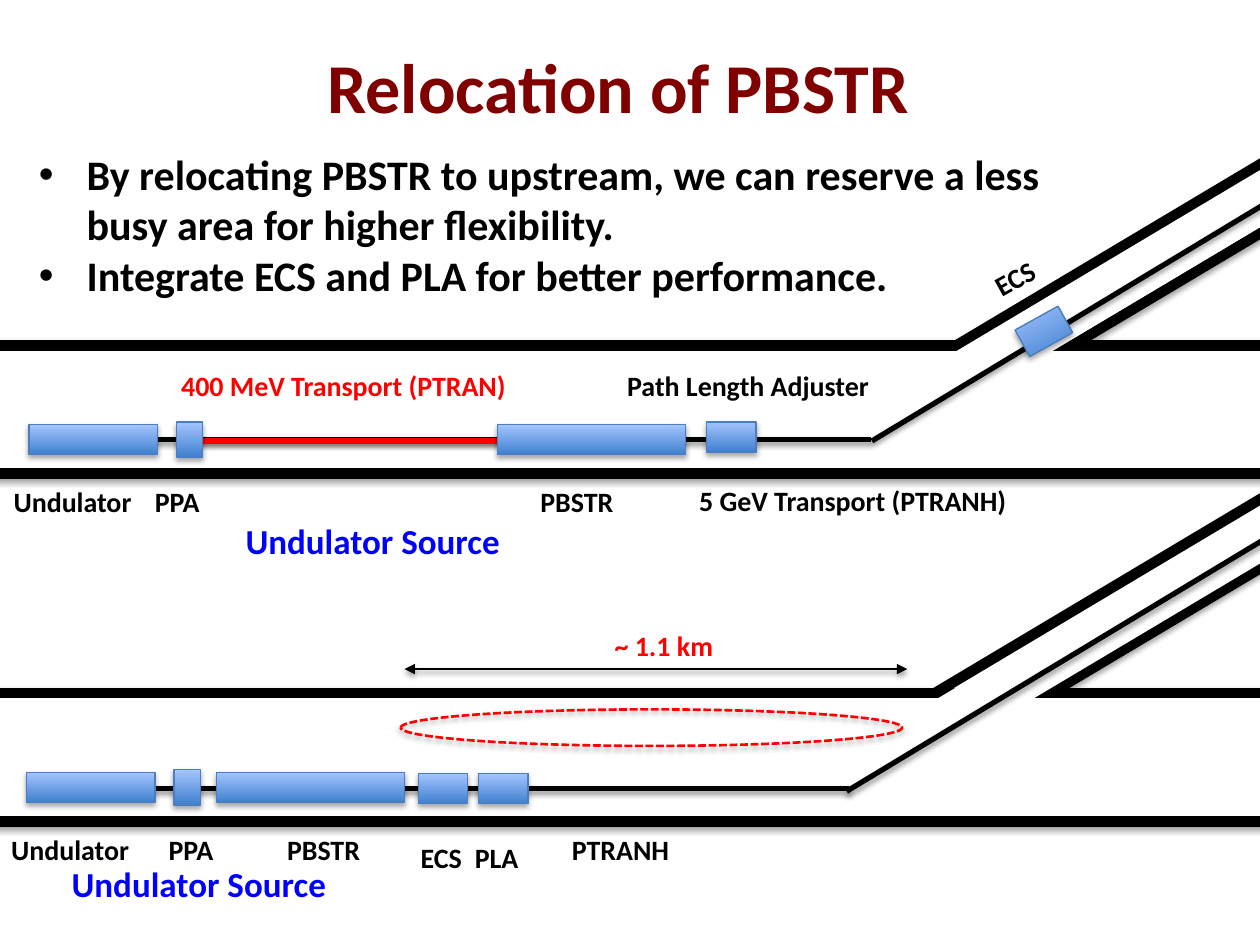
"""Build the slide on relocating PBSTR within the beam tunnel."""
from dataclasses import dataclass

from lxml import etree
from pptx import Presentation
from pptx.dml.color import RGBColor
from pptx.enum import dml, shapes, text
from pptx.oxml.ns import qn
from pptx.util import Inches, Pt


@dataclass(frozen=True)
class Theme:
    font: str = "Calibri"
    black: str = "000000"
    white: str = "FFFFFF"
    red: str = "FF0000"
    blue: str = "0000FF"
    maroon: str = "800000"
    device_low: str = "3F80CE"
    device_high: str = "A4C4FF"
    device_edge: str = "4B7EBC"
    title: int = 40
    body: int = 24
    caption: int = 20
    label: int = 16
    wall: float = 6
    beam: float = 3
    thin: float = 1.5
    edge: float = 0.75


T = Theme()
SLOPE = 329.2
DEVICE_TILT = 330.9


@dataclass(frozen=True)
class Box:
    x: float
    y: float
    w: float
    h: float
    rot: float = 0


@dataclass(frozen=True)
class Line:
    x1: float
    y1: float
    x2: float
    y2: float
    color: str = T.black
    width: float = T.beam
    arrows: bool = False


@dataclass(frozen=True)
class Label:
    words: str
    box: Box
    color: str = T.black
    size: int = T.label


@dataclass(frozen=True)
class Tunnel:
    branch: Box
    hall: Box
    opening: Box
    beams: list[Line]
    devices: list[Box]
    labels: list[Label]


def rgb(color: str) -> RGBColor:
    return RGBColor.from_string(color)


def add_shadow(sp_pr, alpha: int, dist: float) -> None:
    effects = sp_pr.find(qn("a:effectLst"))
    if effects is None:
        effects = etree.SubElement(sp_pr, qn("a:effectLst"))
    shadow = etree.SubElement(effects, qn("a:outerShdw"), blurRad=str(Pt(3.1)),
                              dist=str(Pt(dist)), dir="5400000", rotWithShape="0")
    color = etree.SubElement(shadow, qn("a:srgbClr"), val=T.black)
    etree.SubElement(color, qn("a:alpha"), val=str(alpha * 1000))


def add_box(s, box: Box, kind=shapes.MSO_SHAPE.RECTANGLE, fill: str | None = None,
            line: str | None = None, width: float = 0, shadow: bool = True):
    sp = s.shapes.add_shape(kind, Inches(box.x), Inches(box.y), Inches(box.w), Inches(box.h))
    sp.rotation = box.rot
    sp.shadow.inherit = False
    if fill:
        sp.fill.solid()
        sp.fill.fore_color.rgb = rgb(fill)
    else:
        sp.fill.background()
    if line:
        sp.line.color.rgb = rgb(line)
        sp.line.width = Pt(width)
    else:
        sp.line.fill.background()
    if shadow:
        add_shadow(sp._element.spPr, 35, 1.8)
    return sp


def add_device(s, box: Box) -> None:
    sp = add_box(s, box, line=T.device_edge, width=T.edge)
    sp.fill.gradient()
    sp.fill.gradient_angle = 90
    for stop, color in zip(sp.fill.gradient_stops, (T.device_low, T.device_high)):
        stop.color.rgb = rgb(color)


def add_line(s, line: Line) -> None:
    c = s.shapes.add_connector(shapes.MSO_CONNECTOR.STRAIGHT, Inches(line.x1),
                               Inches(line.y1), Inches(line.x2), Inches(line.y2))
    c.line.color.rgb = rgb(line.color)
    c.line.width = Pt(line.width)
    sp_pr = c._element.spPr
    if line.arrows:
        for end in ("a:headEnd", "a:tailEnd"):
            etree.SubElement(sp_pr.find(qn("a:ln")), qn(end), type="triangle")
    add_shadow(sp_pr, 38, 1.6)


def add_text(s, label: Label, wrap: bool = False, align=text.PP_ALIGN.LEFT,
             bullets: bool = False) -> None:
    b = label.box
    sp = s.shapes.add_textbox(Inches(b.x), Inches(b.y), Inches(b.w), Inches(b.h))
    sp.rotation = b.rot
    tf = sp.text_frame
    tf.word_wrap = wrap
    tf.auto_size = text.MSO_AUTO_SIZE.SHAPE_TO_FIT_TEXT
    tf.text = label.words
    for p in tf.paragraphs:
        p.alignment = align
        p.font.name, p.font.size, p.font.bold = T.font, Pt(label.size), True
        p.font.color.rgb = rgb(label.color)
        if bullets:
            p_pr = p._p.get_or_add_pPr()
            p_pr.set("marL", str(Inches(0.38)))
            p_pr.set("indent", str(-Inches(0.38)))
            bullet_font = etree.Element(qn("a:buFont"), typeface="Arial")
            bullet = etree.Element(qn("a:buChar"), char="•")
            p_pr.insert(0, bullet_font)
            p_pr.insert(1, bullet)


def add_tunnel(s, tunnel: Tunnel) -> None:
    for wall in (tunnel.branch, tunnel.hall):
        add_box(s, wall, fill=T.white, line=T.black, width=T.wall)
    add_box(s, tunnel.opening, fill=T.white, shadow=False)
    for beam in tunnel.beams:
        add_line(s, beam)
    for device in tunnel.devices:
        add_device(s, device)
    for label in tunnel.labels:
        add_text(s, label)


BEFORE = Tunnel(
    Box(7.1, 2.03, 3.5, 0.47, SLOPE), Box(-0.5, 2.74, 10.83, 1.02),
    Box(6.98, 2.08, 3.7, 0.39, SLOPE),
    [Line(0.42, 3.49, 6.91, 3.49), Line(6.92, 3.5, 10.98, 1.05),
     Line(1.42, 3.5, 4.93, 3.5, T.red)],
    [Box(0.23, 3.37, 1.02, 0.24), Box(1.4, 3.35, 0.21, 0.28), Box(3.95, 3.37, 1.49, 0.24),
     Box(5.61, 3.35, 0.39, 0.24), Box(8.09, 2.51, 0.39, 0.24, DEVICE_TILT)],
    [Label("Undulator Source", Box(1.85, 4.07, 2.25, 0.44), T.blue, T.caption),
     Label("Undulator", Box(0.01, 3.8, 1.15, 0.37)),
     Label("PPA", Box(1.13, 3.8, 0.58, 0.37)),
     Label("PBSTR", Box(4.19, 3.8, 0.79, 0.37)),
     Label("400 MeV Transport (PTRAN)", Box(1.34, 2.88, 2.83, 0.37), T.red),
     Label("5 GeV Transport (PTRANH)", Box(5.45, 3.79, 2.69, 0.37)),
     Label("Path Length Adjuster", Box(4.88, 2.88, 2.16, 0.37)),
     Label("ECS", Box(7.79, 2.02, 0.54, 0.37, DEVICE_TILT))])

AFTER = Tunnel(
    Box(7.08, 4.7, 3.5, 0.47, SLOPE), Box(-0.52, 5.5, 10.83, 1.02),
    Box(6.96, 4.76, 3.7, 0.39, SLOPE),
    [Line(0.25, 6.26, 6.74, 6.26), Line(6.72, 6.28, 10.78, 3.83),
     Line(3.21, 5.31, 7.2, 5.31, width=T.thin, arrows=True)],
    [Box(0.21, 6.13, 1.02, 0.24), Box(1.38, 6.11, 0.21, 0.28), Box(1.72, 6.13, 1.49, 0.24),
     Box(3.32, 6.14, 0.39, 0.24), Box(3.8, 6.14, 0.39, 0.24)],
    [Label("Undulator Source", Box(0.47, 6.8, 2.25, 0.44), T.blue, T.caption),
     Label("Undulator", Box(-0.01, 6.56, 1.15, 0.37)),
     Label("PPA", Box(1.24, 6.56, 0.58, 0.37)),
     Label("PBSTR", Box(2.18, 6.56, 0.79, 0.37)),
     Label("PTRANH", Box(4.44, 6.56, 0.98, 0.37)),
     Label("~ 1.1 km", Box(4.78, 4.94, 0.99, 0.37), T.red),
     Label("ECS", Box(3.24, 6.62, 0.54, 0.37)),
     Label("PLA", Box(3.67, 6.62, 0.55, 0.37))])

TITLE = Label("Relocation of PBSTR", Box(0.54, 0.3, 8.73, 0.77), T.maroon, T.title)
POINTS = Label("By relocating PBSTR to upstream, we can reserve a less busy area "
               "for higher flexibility.\nIntegrate ECS and PLA for better performance.",
               Box(0.21, 1.13, 8.26, 1.31), size=T.body)


def main() -> None:
    prs = Presentation()
    prs.slide_width, prs.slide_height = Inches(10), Inches(7.5)
    s = prs.slides.add_slide(prs.slide_layouts[6])
    add_tunnel(s, BEFORE)
    add_text(s, POINTS, wrap=True, bullets=True)
    add_tunnel(s, AFTER)
    freed = add_box(s, Box(3.18, 5.63, 3.98, 0.29), shapes.MSO_SHAPE.OVAL,
                    line=T.red, width=T.thin)
    freed.line.dash_style = dml.MSO_LINE.SQUARE_DOT
    add_text(s, TITLE, wrap=True, align=text.PP_ALIGN.CENTER)
    prs.save("out.pptx")


if __name__ == "__main__":
    main()
